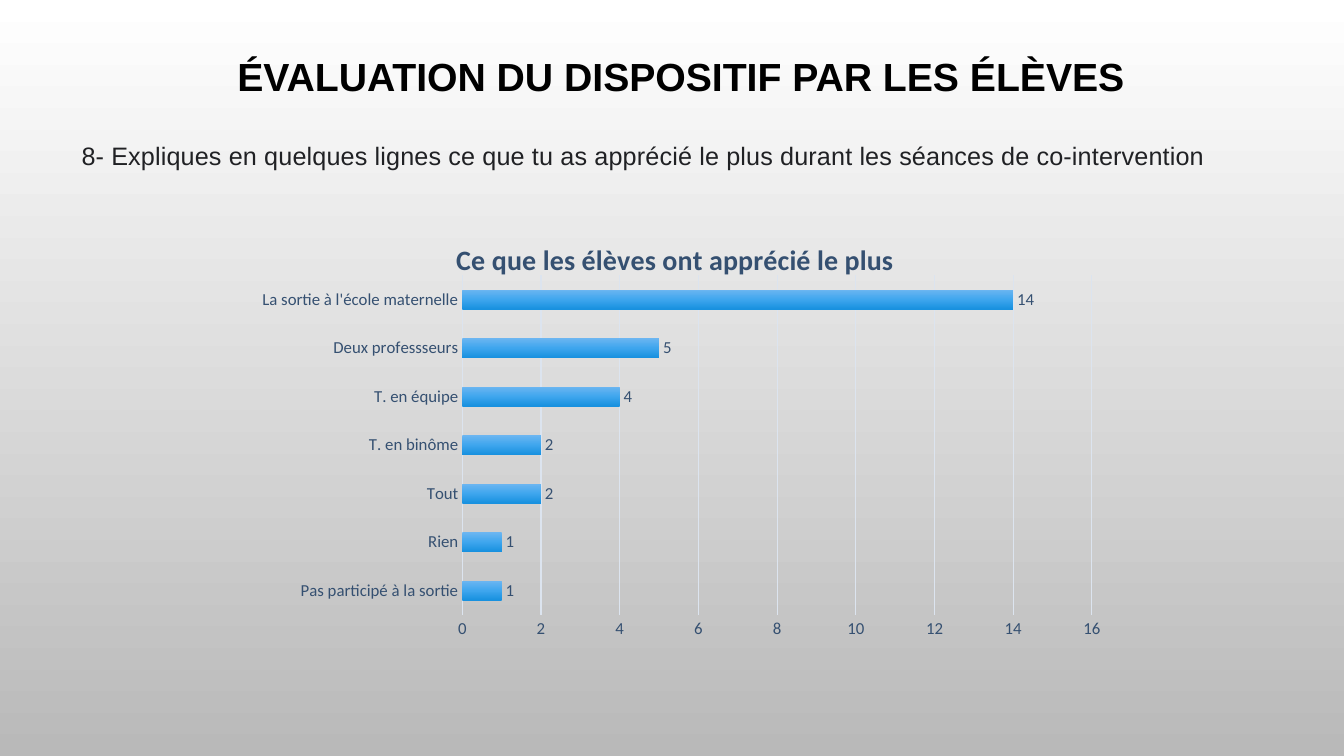
from copy import deepcopy

from lxml import etree
from pptx import Presentation
from pptx.chart.data import CategoryChartData
from pptx.dml.color import RGBColor
from pptx.enum.chart import XL_CHART_TYPE, XL_LABEL_POSITION, XL_TICK_MARK
from pptx.enum.text import MSO_ANCHOR, MSO_AUTO_SIZE, PP_ALIGN
from pptx.oxml import parse_xml
from pptx.oxml.ns import qn
from pptx.util import Cm, Pt

BAR = XL_CHART_TYPE.BAR_CLUSTERED
OUTSIDE = XL_LABEL_POSITION.OUTSIDE_END
NO_TICK = XL_TICK_MARK.NONE
MIDDLE, TOP = MSO_ANCHOR.MIDDLE, MSO_ANCHOR.TOP
CENTER, LEFT = PP_ALIGN.CENTER, PP_ALIGN.LEFT
COLORS = {
    "title": "000000", "question": "202124", "chart": "355071", "grid": "DCE4EF",
    "bg": ["FFFFFF", "B9B9B9"], "bars": ["6CB6F1", "3FA6EE", "1891DF"],
}


def put_text(tf, text, size, color, font="Arial", bold=False, align=LEFT,
             anchor=TOP, spacing=None, after=None):
    tf.word_wrap = True
    tf.auto_size = MSO_AUTO_SIZE.NONE
    tf.vertical_anchor = anchor
    p = tf.paragraphs[0]
    p.alignment, p.line_spacing = align, spacing
    p.space_before, p.space_after = Pt(0), after
    r = p.add_run()
    r.text = text
    r.font.name, r.font.size, r.font.bold = font, Pt(size), bold
    r.font.color.rgb = RGBColor.from_string(color)
    return p


def fill_gradient(fill, element, colors):
    """Spread the colours evenly from top to bottom."""
    fill.gradient()
    fill.gradient_angle = 270
    stops = element.find(".//" + qn("a:gsLst"))
    while len(stops) < len(colors):
        stops.append(deepcopy(stops[0]))
    for i, (stop, color) in enumerate(zip(fill.gradient_stops, colors)):
        stop.position = i / (len(colors) - 1)
        stop.color.rgb = RGBColor.from_string(color)


prs = Presentation()
prs.slide_width, prs.slide_height = Cm(33.87), Cm(19.05)
s = prs.slides.add_slide(prs.slide_layouts[1])
fill_gradient(s.background.fill, s.element, COLORS["bg"])

# Title
title = s.shapes.title
title.left, title.top, title.width, title.height = Cm(2.77), Cm(1.22), Cm(28.78), Cm(1.55)
put_text(title.text_frame, "ÉVALUATION DU DISPOSITIF PAR LES ÉLÈVES", 28,
         COLORS["title"], bold=True, align=CENTER, anchor=MIDDLE, spacing=0.9)

# Question
body = s.placeholders[1]
body.left, body.top, body.width, body.height = Cm(1.8), Cm(3.3), Cm(29.06), Cm(1.09)
p = put_text(body.text_frame,
             "8- Expliques en quelques lignes ce que tu as apprécié le plus "
             "durant les séances de co-intervention",
             18, COLORS["question"], spacing=1.15, after=Pt(8))
pPr = p._p.get_or_add_pPr()
pPr.set("marL", "0")
pPr.set("indent", "0")
etree.SubElement(pPr, qn("a:buNone"))
p.runs[0].font._element.set("spc", "10")

# Chart data
answers = {
    "Pas participé à la sortie": 1, "Rien": 1, "Tout": 2, "T. en binôme": 2,
    "T. en équipe": 4, "Deux professseurs": 5, "La sortie à l'école maternelle": 14,
}
data = CategoryChartData()
data.categories = list(answers)
data.add_series("Series 1", list(answers.values()))
chart = s.shapes.add_chart(BAR, Cm(5.84), Cm(5.56), Cm(22.35), Cm(10.57), data).chart
chart.has_legend = False
chart.font.name, chart.font.size = "Calibri", Pt(12)
chart.font.color.rgb = RGBColor.from_string(COLORS["chart"])
chart.has_title = True
put_text(chart.chart_title.text_frame, "Ce que les élèves ont apprécié le plus", 20,
         COLORS["chart"], font="Calibri", bold=True, align=CENTER)

# Bars and labels
plot = chart.plots[0]
plot.gap_width, plot.vary_by_categories = 150, False
bars = plot.series[0]
fill_gradient(bars.format.fill, bars._element, COLORS["bars"])
plot.has_data_labels = True
plot.data_labels.show_value = True
plot.data_labels.position = OUTSIDE

# Axes
cat, val = chart.category_axis, chart.value_axis
for axis in (cat, val):
    axis.major_tick_mark = axis.minor_tick_mark = NO_TICK
val.minimum_scale, val.maximum_scale, val.major_unit = 0, 16, 2
val.format.line.fill.background()
cat.has_major_gridlines, val.has_major_gridlines = False, True
for line in (cat.format.line, val.major_gridlines.format.line):
    line.width = Pt(0.75)
    line.color.rgb = RGBColor.from_string(COLORS["grid"])

# Plot area, as shares of the chart
plot_area = chart._chartSpace.chart.plotArea
for old in plot_area.findall(qn("c:layout")):
    plot_area.remove(old)
sides = "".join(f'<c:{k} val="{v}"/>' for k, v in
                {"x": 0.26, "y": 0.13, "w": 0.71, "h": 0.81}.items())
plot_area.insert(0, parse_xml(
    '<c:layout xmlns:c="http://schemas.openxmlformats.org/drawingml/2006/chart">'
    '<c:manualLayout><c:layoutTarget val="inner"/><c:xMode val="edge"/>'
    f'<c:yMode val="edge"/>{sides}</c:manualLayout></c:layout>'))

prs.save("out.pptx")
